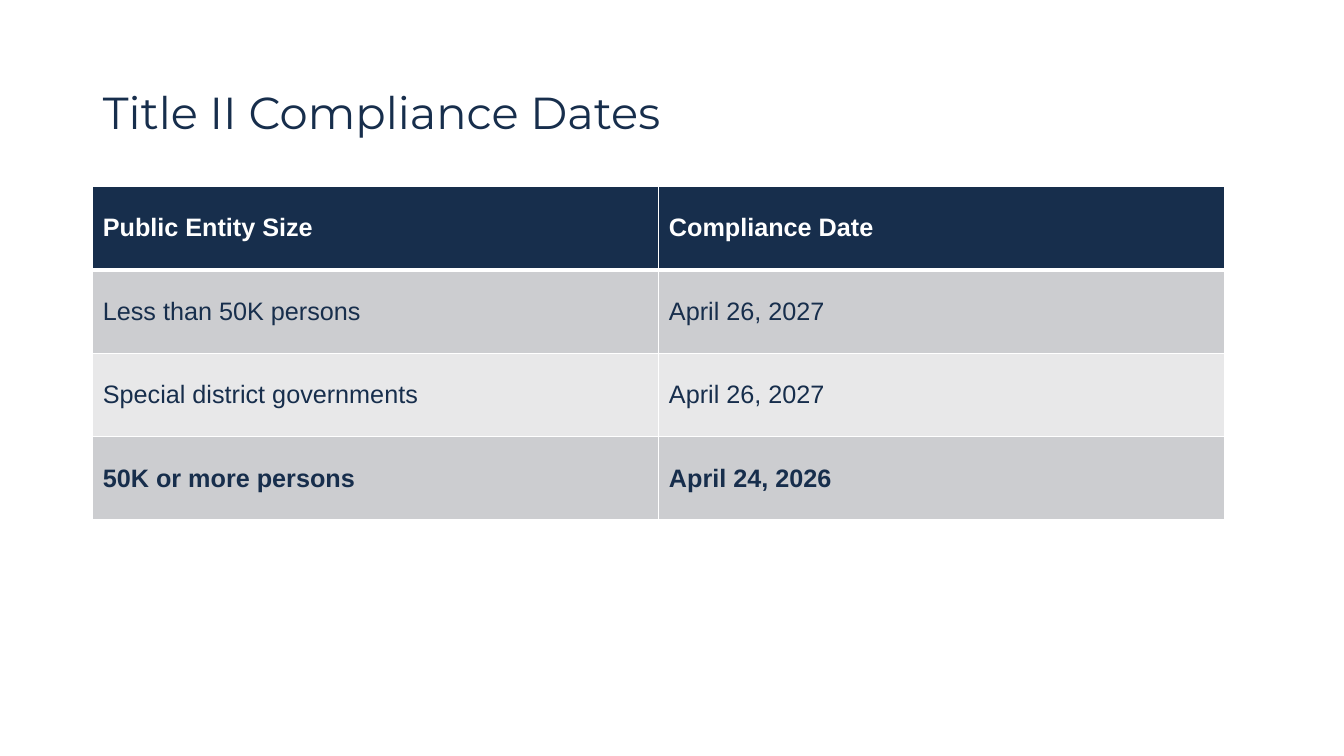
from lxml import etree
from pptx import Presentation
from pptx import util as u
from pptx.dml.color import RGBColor
from pptx.enum import text
from pptx.oxml import ns

NAVY, WHITE = "172E4C", "FFFFFF"
BANDS = ["CCCDD0", "E8E8E9"]
COMPLIANCE_DATES = [
    ("Public Entity Size", "Compliance Date"),
    ("Less than 50K persons", "April 26, 2027"),
    ("Special district governments", "April 26, 2027"),
    ("50K or more persons", "April 24, 2026"),
]


def color(value):
    """Turn a hex string into a colour."""
    return RGBColor.from_string(value)


def apply(target, values):
    """Set each attribute named in a dict of format values."""
    for name, value in values.items():
        setattr(target, name, value)


class ComplianceSlide:
    """Hold the style and the current slide."""

    title_font = {"name": "Montserrat", "size": u.Pt(32), "bold": False}
    cell_font = {"name": "Arial", "size": u.Pt(18)}

    def __init__(self, deck):
        """Add a title-only slide to the deck."""
        self.slide = deck.slides.add_slide(deck.slide_layouts[5])

    def title(self, wording, left, top, width, height):
        """Place and format the title placeholder."""
        heading = self.slide.shapes.title
        apply(heading, {"left": u.Inches(left), "top": u.Inches(top),
                        "width": u.Inches(width), "height": u.Inches(height)})
        heading.text_frame.text = wording
        apply(heading.text_frame, {"word_wrap": True, "auto_size": text.MSO_AUTO_SIZE.NONE,
                                   "vertical_anchor": text.MSO_ANCHOR.MIDDLE})
        line = heading.text_frame.paragraphs[0]
        apply(line, {"alignment": text.PP_ALIGN.LEFT, "line_spacing": 0.9})
        apply(line.font, self.title_font)
        line.font.color.rgb = color(NAVY)

    def border(self, cell, side, points):
        """Draw one white border of a cell."""
        edge = etree.SubElement(cell._tc.get_or_add_tcPr(), ns.qn(f"a:ln{side}"),
                                w=str(u.Pt(points)))
        fill = etree.SubElement(edge, ns.qn("a:solidFill"))
        etree.SubElement(fill, ns.qn("a:srgbClr"), val=WHITE)

    def cell(self, cell, wording, row, bold):
        """Fill and format one table cell."""
        for side in "LRTB":
            under_header = (row, side) in [(0, "B"), (1, "T")]
            self.border(cell, side, 3 if under_header else 1)
        cell.fill.solid()
        cell.fill.fore_color.rgb = color(BANDS[(row - 1) % 2] if row else NAVY)
        cell.text = wording
        cell.vertical_anchor = text.MSO_ANCHOR.MIDDLE
        font = cell.text_frame.paragraphs[0].font
        apply(font, {**self.cell_font, "bold": bold})
        font.color.rgb = color(NAVY if row else WHITE)

    def table(self, entries, left, top, width, height):
        """Add a table with a header, banded rows and a bold last row."""
        grid = self.slide.shapes.add_table(
            len(entries), len(entries[0]), u.Inches(left), u.Inches(top),
            u.Inches(width), u.Inches(height)).table
        for row, entry in enumerate(entries):
            for column, wording in enumerate(entry):
                self.cell(grid.cell(row, column), wording, row, row in (0, len(entries) - 1))


def main():
    """Build and save the slide."""
    deck = Presentation()
    apply(deck, {"slide_width": u.Inches(13.33), "slide_height": u.Inches(7.5)})
    page = ComplianceSlide(deck)
    page.title("Title II Compliance Dates", 0.92, 0.84, 11.5, 0.61)
    page.table(COMPLIANCE_DATES, 0.92, 1.85, 11.23, 3.31)
    deck.save("out.pptx")


if __name__ == "__main__":
    main()
